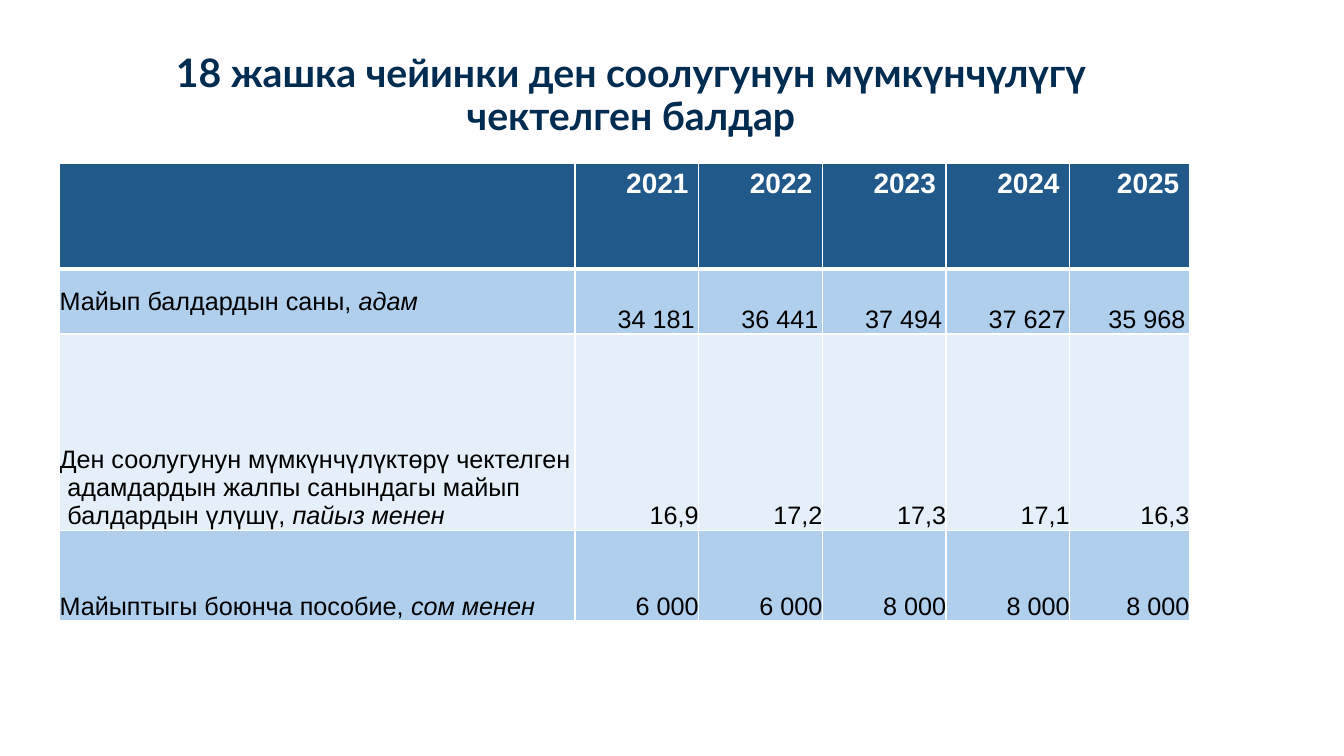
from dataclasses import dataclass

from lxml.etree import SubElement
from pptx import Presentation
from pptx.dml.color import RGBColor
from pptx.enum.text import MSO_ANCHOR, PP_ALIGN
from pptx.oxml.ns import qn
from pptx.util import Cm, Pt


@dataclass(frozen=True)
class Theme:
    navy: str = "002C52"
    head: str = "21598B"
    band: str = "AFCFEC"
    pale: str = "E4EFF9"
    white: str = "FFFFFF"
    black: str = "000000"
    serif: str = "Lato"
    sans: str = "Arial"
    title: int = 28
    label: int = 20
    body: int = 18


@dataclass(frozen=True)
class Box:
    left: float
    top: float
    width: float
    height: float

    def place(self):
        return Cm(self.left), Cm(self.top), Cm(self.width), Cm(self.height)


@dataclass(frozen=True)
class Row:
    label: str
    unit: str
    values: tuple
    high: float
    fill: str
    anchor: MSO_ANCHOR = MSO_ANCHOR.BOTTOM
    hang: float = 0
    inset: float = 0
    gap: int = 0


THEME = Theme()
TITLE = "18 жашка чейинки ден соолугунун мүмкүнчүлүгү чектелген балдар"
YEARS = ("2021", "2022", "2023", "2024", "2025")
SHARES = (13, 3.12, 3.12, 3.12, 3.12, 3.02)
HEAD_HIGH = 2.67
ROWS = (
    Row("Майып балдардын саны, ", "адам",
        ("34 181", "36 441", "37 494", "37 627", "35 968"),
        1.63, THEME.band, anchor=MSO_ANCHOR.MIDDLE, inset=0.1, gap=2),
    Row("Ден соолугунун мүмкүнчүлүктөрү чектелген адамдардын жалпы "
        "санындагы майып балдардын үлүшү, ", "пайыз менен",
        ("16,9", "17,2", "17,3", "17,1", "16,3"),
        4.95, THEME.pale, hang=0.2),
    Row("Майыптыгы боюнча пособие, ", "сом менен",
        ("6 000", "6 000", "8 000", "8 000", "8 000"),
        2.29, THEME.band, gap=2),
)


def add_run(para, text, size, color, face=THEME.sans, bold=False, slant=False):
    run = para.add_run()
    run.text = text
    font = run.font
    font.name, font.size = face, Pt(size)
    font.bold, font.italic = bold, slant
    font.color.rgb = RGBColor.from_string(color)


def add_edge(cell, side, width):
    line = SubElement(cell._tc.get_or_add_tcPr(), qn(f"a:ln{side}"), w=str(Pt(width)))
    fill = SubElement(line, qn("a:solidFill"))
    SubElement(fill, qn("a:srgbClr"), val=THEME.white)


def style_cell(cell, color, top=1, foot=1):
    for side, width in (("L", 1), ("R", 1), ("T", top), ("B", foot)):
        add_edge(cell, side, width)
    cell.fill.solid()
    cell.fill.fore_color.rgb = RGBColor.from_string(color)


def set_inset(cell, right=0):
    cell.margin_left = cell.margin_top = cell.margin_bottom = 0
    cell.margin_right = Cm(right)


def draw_title(slide, box):
    frame = slide.shapes.add_textbox(*box.place()).text_frame
    frame.word_wrap = True
    frame.vertical_anchor = MSO_ANCHOR.MIDDLE
    para = frame.paragraphs[0]
    para.alignment = PP_ALIGN.CENTER
    para.line_spacing = 0.9
    add_run(para, TITLE, THEME.title, THEME.navy, THEME.serif, bold=True)


def draw_head(table):
    for col in range(len(SHARES)):
        style_cell(table.cell(0, col), THEME.head, foot=3)
    for col, year in enumerate(YEARS, 1):
        para = table.cell(0, col).text_frame.paragraphs[0]
        para.alignment = PP_ALIGN.RIGHT
        add_run(para, year, THEME.label, THEME.white, bold=True)


def draw_row(table, index, row):
    top = 3 if index == 1 else 1
    cell = table.cell(index, 0)
    style_cell(cell, row.fill, top)
    set_inset(cell)
    cell.vertical_anchor = row.anchor
    para = cell.text_frame.paragraphs[0]
    if row.hang:
        props = para._p.get_or_add_pPr()
        props.set("marL", str(Cm(row.hang)))
        props.set("indent", str(-Cm(row.hang)))
    add_run(para, row.label, THEME.body, THEME.black)
    add_run(para, row.unit, THEME.body, THEME.black, slant=True)
    for col, value in enumerate(row.values, 1):
        cell = table.cell(index, col)
        style_cell(cell, row.fill, top)
        set_inset(cell, row.inset)
        cell.vertical_anchor = MSO_ANCHOR.BOTTOM
        para = cell.text_frame.paragraphs[0]
        para.alignment = PP_ALIGN.RIGHT
        para.space_after = Pt(row.gap)
        add_run(para, value, THEME.body, THEME.black)


def draw_table(slide, box):
    table = slide.shapes.add_table(len(ROWS) + 1, len(SHARES), *box.place()).table
    for col, share in zip(table.columns, SHARES):
        col.width = Cm(box.width * share / sum(SHARES))
    highs = [HEAD_HIGH] + [row.high for row in ROWS]
    for line, high in zip(table.rows, highs):
        line.height = Cm(box.height * high / sum(highs))
    draw_head(table)
    for index, row in enumerate(ROWS, 1):
        draw_row(table, index, row)


def main():
    deck = Presentation()
    deck.slide_width, deck.slide_height = Cm(33.87), Cm(19.05)
    slide = deck.slides.add_slide(deck.slide_layouts[6])
    draw_title(slide, Box(3.2, 1.09, 25.4, 2.67))
    draw_table(slide, Box(1.5, 4.12, 28.48, 11.53))
    deck.save("out.pptx")


if __name__ == "__main__":
    main()
